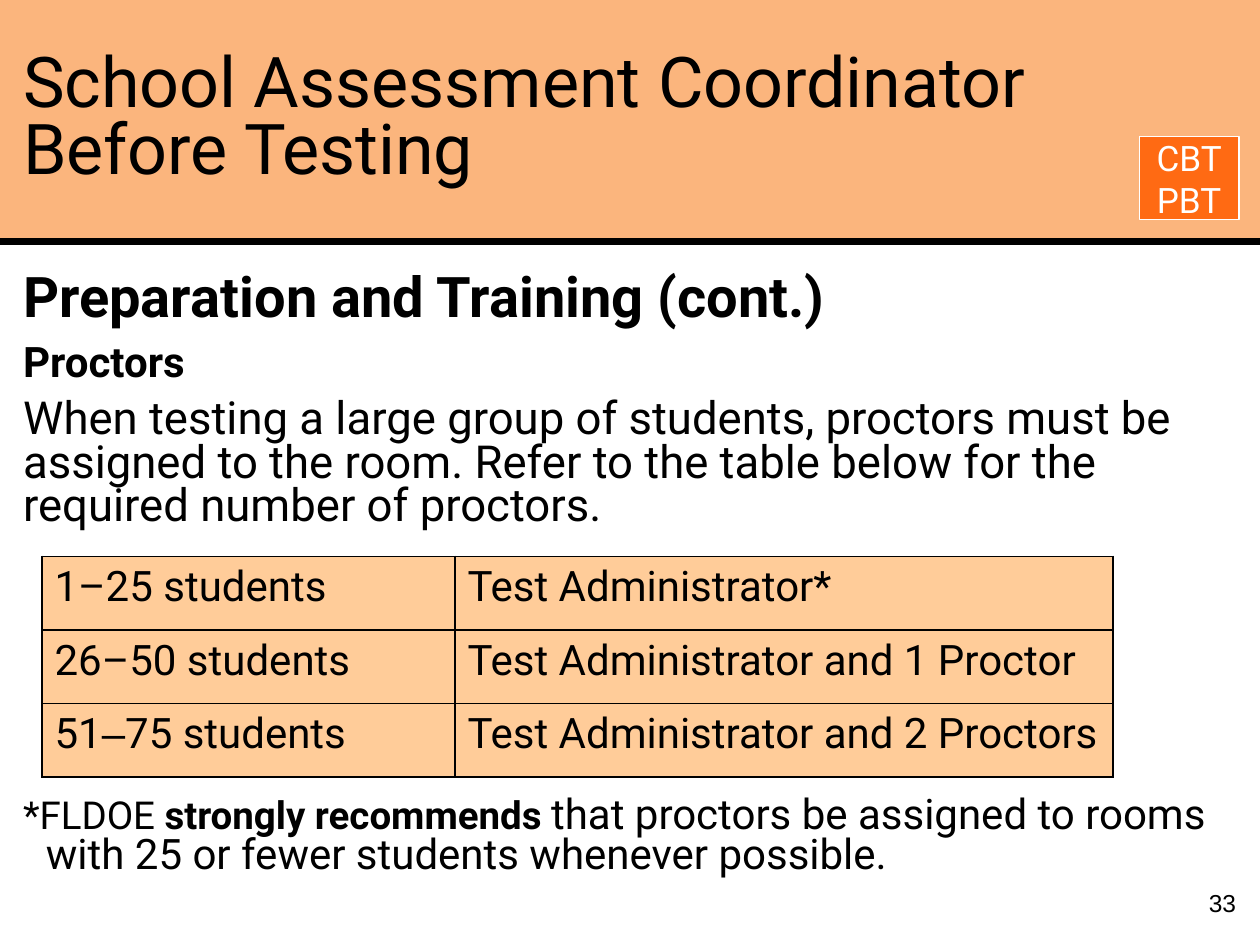
from lxml import etree
from pptx import Presentation
from pptx import util as u
from pptx.dml import color as c
from pptx.enum import shapes, text
from pptx.oxml import ns

TITLE = [("School Assessment Coordinator\nBefore Testing", {})]
BODY = [
    ([("Preparation and Training (cont.)", dict(size="heading", bold=True))],
     dict(hang=27, spacing=0.9, after=6)),
    ([("Proctors", dict(size="table", bold=True))], dict(spacing=0.8, before=3, after=3)),
    ([("When testing a large group of students, proctors must be assigned to the room. "
       "Refer to the table below for the required number of proctors.", dict(size="body"))],
     dict(spacing=0.8, before=5)),
    ([("*FLDOE ", dict(size="note")),
      ("strongly recommends ", dict(size="note", bold=True)),
      ("that proctors be assigned to rooms with 25 or fewer students whenever possible.",
       dict(size="table"))],
     dict(hang=13, spacing=0.8, before=152.5)),
]
PROCTORS = [
    ([("1–25 students", {})], [("Test Administrator*", {})]),
    ([("26–50 students", {})], [("Test Administrator and 1 Proctor", {})]),
    ([("51", {}), ("–", dict(font="number")), ("75 students", {})],
     [("Test Administrator and 2 Proctors", {})]),
]
MODES = ["CBT", "PBT"]
PAGE_NUMBER = "33"

THEME = dict(
    colors=dict(ink="000000", paper="FFFFFF", band="FBB57D", cell="FFCC99", badge="FF6A13"),
    sizes=dict(title=40, heading=32, body=26, table=24, note=22, badge=20, number=14),
    fonts=dict(main="Roboto", number="Arial"),
)
WIDTH, HEIGHT = 720, 540
BAND_HEIGHT = 138
TITLE_AREA = (6, 12, 708, 114)
BODY_AREA = (6, 150, 702, 368.5)
BADGE_AREA = (651, 78, 57, 47.5)
NUMBER_AREA = (672, 504, 41.5, 26.5)
TABLE_LEFT, TABLE_TOP, ROW_HEIGHT = 24, 318, 42
COLUMNS = (236, 376)


def points(values):
    return [u.Pt(value) for value in values]


def color(name):
    return c.RGBColor.from_string(THEME["colors"][name])


def write(para, spans, size="body", ink="ink", font="main", bold=False, align="LEFT",
          spacing=1.0, before=0, after=0, hang=0):
    para.alignment = getattr(text.PP_ALIGN, align)
    para.line_spacing = spacing
    para.space_before, para.space_after = u.Pt(before), u.Pt(after)
    settings = para._p.get_or_add_pPr()
    settings.set("marL", str(u.Pt(hang)))
    settings.set("indent", str(u.Pt(-hang)))
    etree.SubElement(settings, ns.qn("a:buNone"))
    for words, changes in spans:
        look = dict(size=size, font=font, bold=bold) | changes
        for number, line in enumerate(words.split("\n")):
            if number:
                para.add_line_break()
            span = para.add_run()
            span.text = line
            span.font.name = THEME["fonts"][look["font"]]
            span.font.size = u.Pt(THEME["sizes"][look["size"]])
            span.font.bold = look["bold"]
            span.font.color.rgb = color(ink)


def write_all(frame, items, **shared):
    for number, (spans, changes) in enumerate(items):
        para = frame.add_paragraph() if number else frame.paragraphs[0]
        write(para, spans, **(shared | changes))


def place(box, area, anchor):
    box.left, box.top, box.width, box.height = points(area)
    box.text_frame.word_wrap = True
    box.text_frame.auto_size = text.MSO_AUTO_SIZE.NONE
    box.text_frame.vertical_anchor = anchor


def add_block(page, area, fill, line=None):
    block = page.shapes.add_shape(shapes.MSO_SHAPE.RECTANGLE, *points(area))
    block.shadow.inherit = False
    block.fill.solid()
    block.fill.fore_color.rgb = color(fill)
    if line:
        block.line.color.rgb = color(line)
        block.line.width = u.Pt(0.75)
    else:
        block.line.fill.background()
    return block


def add_header(page):
    title = page.shapes.title
    band = add_block(page, (0, 0, WIDTH, BAND_HEIGHT), "band")
    rule = page.shapes.add_connector(
        shapes.MSO_CONNECTOR.STRAIGHT, *points((0, BAND_HEIGHT, WIDTH, BAND_HEIGHT)))
    rule.line.color.rgb = color("ink")
    rule.line.width = u.Pt(4)
    etree.SubElement(rule._element.spPr, ns.qn("a:effectLst"))
    for part in (band, rule):
        title.element.addprevious(part.element)
    place(title, TITLE_AREA, text.MSO_ANCHOR.MIDDLE)
    write_all(title.text_frame, [(TITLE, {})], size="title", spacing=0.8)


def add_borders(cell):
    settings = cell._tc.get_or_add_tcPr()
    for side in ("lnL", "lnR", "lnT", "lnB"):
        line = etree.SubElement(settings, ns.qn(f"a:{side}"), w=str(u.Pt(1)))
        fill = etree.SubElement(line, ns.qn("a:solidFill"))
        etree.SubElement(fill, ns.qn("a:srgbClr"), val=THEME["colors"]["ink"])


def add_proctor_table(page):
    area = (TABLE_LEFT, TABLE_TOP, sum(COLUMNS), ROW_HEIGHT * len(PROCTORS))
    table = page.shapes.add_table(len(PROCTORS), len(COLUMNS), *points(area)).table
    table.first_row = table.horz_banding = False
    for column, width in zip(table.columns, COLUMNS):
        column.width = u.Pt(width)
    for row, entries in zip(table.rows, PROCTORS):
        row.height = u.Pt(ROW_HEIGHT)
        for cell, spans in zip(row.cells, entries):
            add_borders(cell)
            cell.fill.solid()
            cell.fill.fore_color.rgb = color("cell")
            write_all(cell.text_frame, [(spans, {})], size="table")


def add_badge(page):
    badge = add_block(page, BADGE_AREA, "badge", line="paper")
    place(badge, BADGE_AREA, text.MSO_ANCHOR.MIDDLE)
    frame = badge.text_frame
    frame.margin_left = frame.margin_right = frame.margin_top = frame.margin_bottom = 0
    write_all(frame, [([(mode, {})], {}) for mode in MODES],
              size="badge", ink="paper", align="CENTER")


def main():
    deck = Presentation()
    deck.slide_width, deck.slide_height = points((WIDTH, HEIGHT))
    page = deck.slides.add_slide(deck.slide_layouts[1])
    add_header(page)

    number = page.shapes.add_textbox(*points(NUMBER_AREA))
    place(number, NUMBER_AREA, text.MSO_ANCHOR.TOP)
    write_all(number.text_frame, [([(PAGE_NUMBER, {})], {})],
              size="number", font="number", align="RIGHT")

    body = page.placeholders[1]
    place(body, BODY_AREA, text.MSO_ANCHOR.TOP)
    write_all(body.text_frame, BODY)

    add_proctor_table(page)
    add_badge(page)
    deck.save("out.pptx")


if __name__ == "__main__":
    main()
